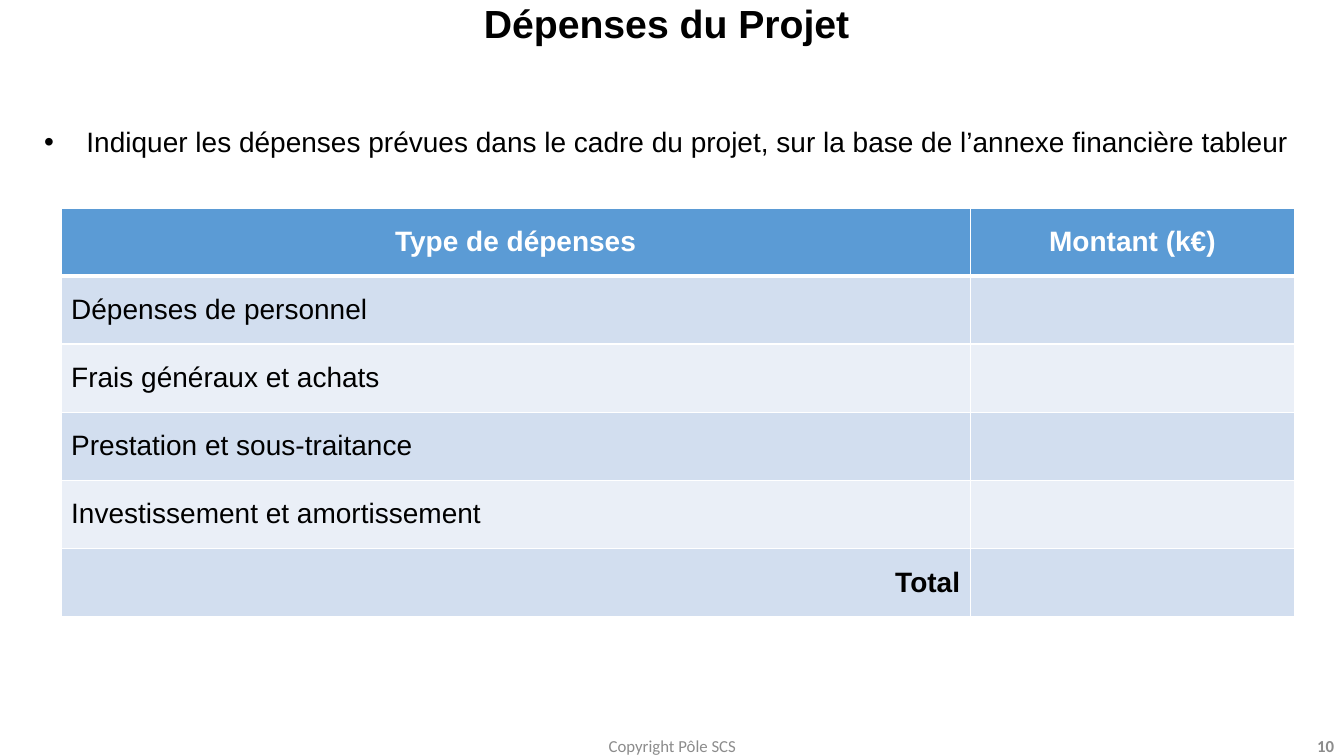
from pptx import Presentation
from pptx.dml.color import RGBColor
from pptx.enum.text import MSO_ANCHOR as Anchor, PP_ALIGN as Align
from pptx.oxml.ns import qn
from pptx.util import Cm, Pt
from lxml.etree import SubElement as Sub, Element

# Content
TITLE = "Dépenses du Projet "
HINT = ("Indiquer les dépenses prévues dans le cadre du projet, "
        "sur la base de l’annexe financière tableur")
HEADS = ["Type de dépenses", "Montant (k€)"]
COSTS = ["Dépenses de personnel", "Frais généraux et achats",
         "Prestation et sous-traitance", "Investissement et amortissement"]
TOTAL = "Total"
FOOT = "Copyright Pôle SCS"
PAGE = "10"

BLACK, WHITE, GREY, BLUE = "000000", "FFFFFF", "8C8C8C", "5B9BD5"
BANDS = ["D2DEEF", "EAEFF7"]
WIDE, HIGH = Cm(33.87), Cm(19.05)
COLS = [Cm(22.91), Cm(8.18)]
ROW = Cm(1.715)


def color(code):
    return RGBColor.from_string(code)


def write(frame, text, size, code=BLACK, bold=False, align=Align.LEFT, font="Arial"):
    par = frame.paragraphs[0]
    par.alignment = align
    run = par.add_run()
    run.text = text
    run.font.name, run.font.size, run.font.bold = font, Pt(size), bold
    run.font.color.rgb = color(code)
    return par


def add_box(left, top, width, height, anchor=Anchor.TOP):
    frame = slide.shapes.add_textbox(left, top, width, height).text_frame
    frame.word_wrap = True
    frame.vertical_anchor = anchor
    return frame


def add_edges(cell, under):
    props = cell._tc.get_or_add_tcPr()
    for at, (side, width) in enumerate([("L", 1), ("R", 1), ("T", 1), ("B", under)]):
        line = Element(qn(f"a:ln{side}"), w=str(Pt(width)))
        Sub(Sub(line, qn("a:solidFill")), qn("a:srgbClr"), val=WHITE)
        props.insert(at, line)


deck = Presentation()
deck.slide_width, deck.slide_height = WIDE, HIGH
slide = deck.slides.add_slide(deck.slide_layouts[5])

# Title
title = slide.shapes.title
title.left, title.top, title.width, title.height = 0, 0, WIDE, Cm(1.6)
title.text_frame.vertical_anchor = Anchor.TOP
write(title.text_frame, TITLE, 28, bold=True, align=Align.CENTER).line_spacing = 0.9

# Bulleted hint
hint = add_box(Cm(0.86), Cm(3.12), Cm(32.41), Cm(2))
par = write(hint, HINT, 20, align=Align.JUSTIFY)
par.line_spacing = 0.9
props = par._p.get_or_add_pPr()
props.set("marL", str(Cm(1.07)))
props.set("indent", str(-Cm(1.07)))
Sub(props, qn("a:buFont"), typeface="Arial")
Sub(props, qn("a:buChar"), char="•")

# Table of costs
rows = [HEADS] + [[cost, ""] for cost in COSTS] + [[TOTAL, ""]]
table = slide.shapes.add_table(len(rows), len(COLS), Cm(1.54), Cm(5.24),
                               sum(COLS), ROW * len(rows)).table
for col, width in zip(table.columns, COLS):
    col.width = width
for r, row in enumerate(rows):
    table.rows[r].height = ROW
    head, last = r == 0, r == len(rows) - 1
    align = Align.CENTER if head else Align.RIGHT if last else Align.LEFT
    for c, text in enumerate(row):
        cell = table.cell(r, c)
        cell.vertical_anchor = Anchor.MIDDLE
        cell.fill.solid()
        cell.fill.fore_color.rgb = color(BLUE if head else BANDS[(r - 1) % 2])
        add_edges(cell, 3 if head else 1)
        if text:
            write(cell.text_frame, text, 20, WHITE if head else BLACK, head or last, align)

# Footer and page number
for text, left, width, bold, align in [
        (FOOT, Cm(11.23), Cm(11.43), False, Align.CENTER),
        (PAGE, WIDE - Cm(7.62), Cm(7.62), True, Align.RIGHT)]:
    foot = add_box(left, Cm(18.58), width, Cm(0.41), Anchor.MIDDLE)
    write(foot, text, 12, GREY, bold, align, "Calibri")

deck.save("out.pptx")
